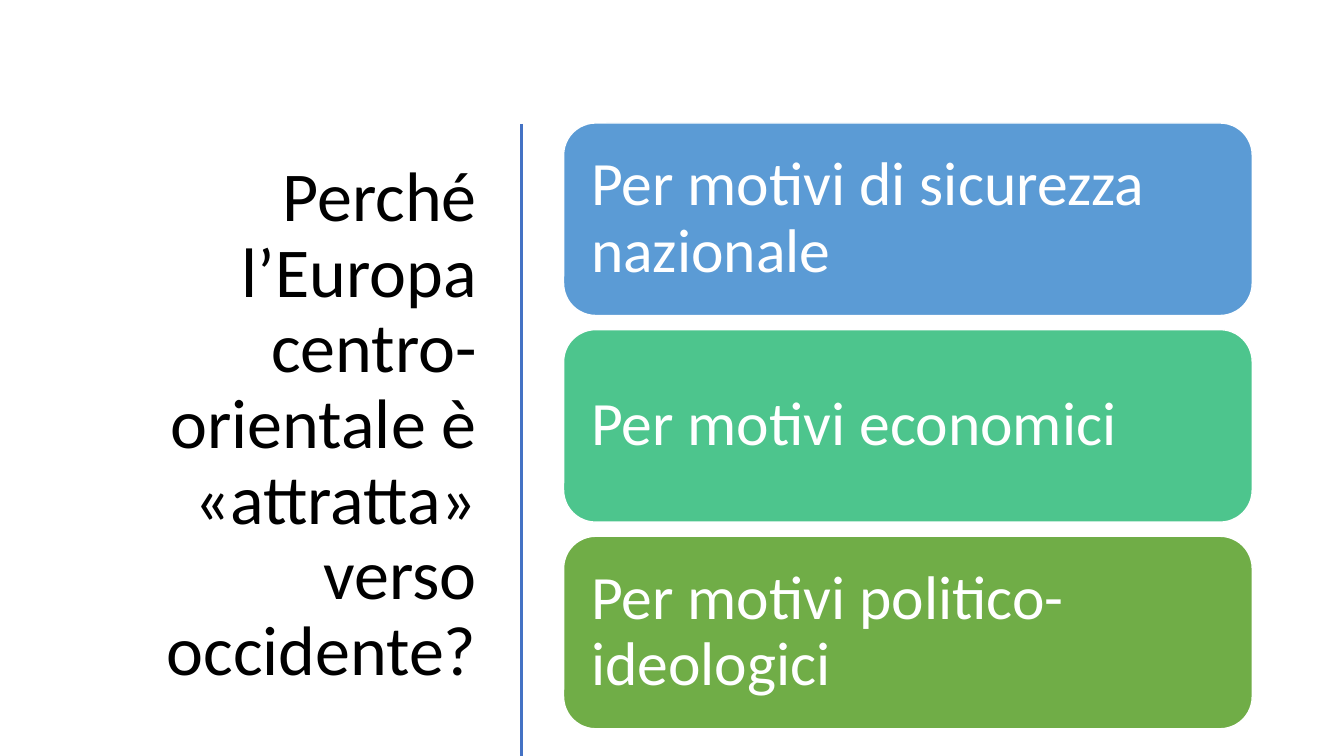
from lxml import etree
from pptx import Presentation
from pptx import util as u
from pptx.dml.color import RGBColor
from pptx.enum import shapes, text
from pptx.oxml.ns import qn

TITLE = "Perché l’Europa centro-orientale è «attratta» verso occidente?"
REASONS = [
    ("Per motivi di sicurezza nazionale", "blue"),
    ("Per motivi economici", "teal"),
    ("Per motivi politico-ideologici", "green"),
]
COLORS = {
    "black": "000000",
    "white": "FFFFFF",
    "divider": "4472C4",
    "blue": "5B9BD5",
    "teal": "4DC58D",
    "green": "70AD47",
}
FONT = "Calibri"
CARD_LEFT, CARD_TOP, CARD_WIDTH, CARD_HEIGHT = 5.59, 1.22, 6.83, 1.91
CARD_STEP = 2.05
CARD_MARGIN = 0.18


def color(name):
    return RGBColor.from_string(COLORS[name])


def write(frame, content, size, color_name, alignment):
    frame.text = content
    frame.word_wrap = True
    frame.auto_size = text.MSO_AUTO_SIZE.NONE
    frame.vertical_anchor = text.MSO_ANCHOR.MIDDLE
    paragraph = frame.paragraphs[0]
    paragraph.alignment = alignment
    paragraph.line_spacing = 0.9
    font = paragraph.runs[0].font
    font.name = FONT
    font.size = u.Pt(size)
    font.color.rgb = color(color_name)


def add_title(slide):
    title = slide.shapes.title
    title.left, title.top = u.Inches(0.52), u.Inches(1.17)
    title.width, title.height = u.Inches(4.31), u.Inches(6.11)
    write(title.text_frame, TITLE, 50, "black", text.PP_ALIGN.RIGHT)


def add_divider(slide):
    divider = slide.shapes.add_connector(
        shapes.MSO_CONNECTOR.STRAIGHT,
        u.Inches(5.17), u.Inches(1.23), u.Inches(5.17), u.Inches(7.5),
    )
    divider.line.color.rgb = color("divider")
    divider.line.width = u.Pt(2)
    etree.SubElement(divider._element.spPr, qn("a:effectLst"))


def add_card(slide, index, content, fill):
    card = slide.shapes.add_shape(
        shapes.MSO_SHAPE.ROUNDED_RECTANGLE,
        u.Inches(CARD_LEFT), u.Inches(CARD_TOP + index * CARD_STEP),
        u.Inches(CARD_WIDTH), u.Inches(CARD_HEIGHT),
    )
    card.shadow.inherit = False
    card.fill.solid()
    card.fill.fore_color.rgb = color(fill)
    card.line.color.rgb = color("white")
    card.line.width = u.Pt(1)
    frame = card.text_frame
    frame.margin_left = frame.margin_right = u.Inches(CARD_MARGIN)
    frame.margin_top = frame.margin_bottom = u.Inches(CARD_MARGIN)
    write(frame, content, 44, "white", text.PP_ALIGN.LEFT)


def main():
    presentation = Presentation()
    presentation.slide_width = u.Inches(13.33)
    presentation.slide_height = u.Inches(7.5)
    slide = presentation.slides.add_slide(presentation.slide_layouts[5])
    add_title(slide)
    add_divider(slide)
    for index, (content, fill) in enumerate(REASONS):
        add_card(slide, index, content, fill)
    presentation.save("out.pptx")


if __name__ == "__main__":
    main()
